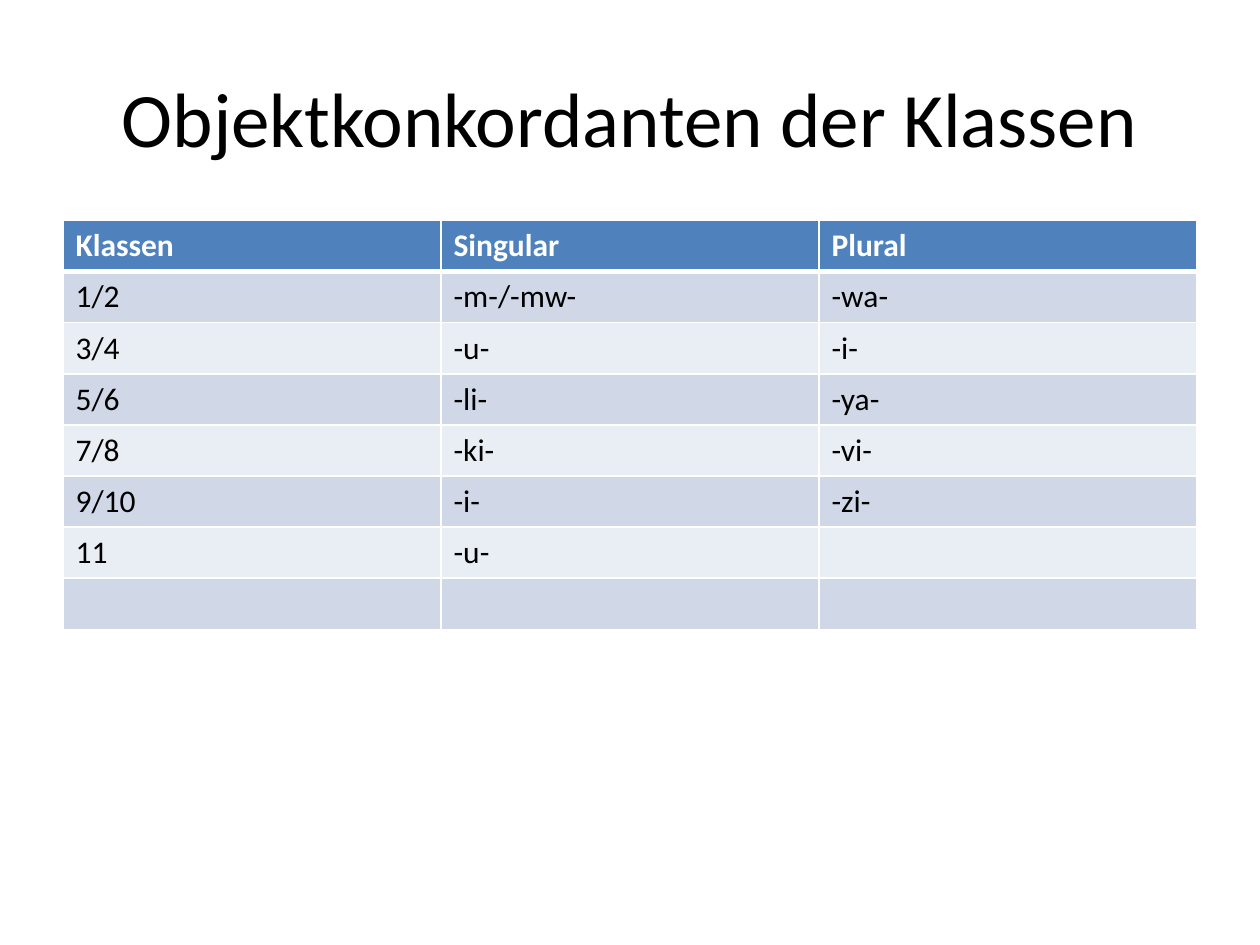
from lxml import etree
from pptx import Presentation
from pptx import util as u
from pptx.dml.color import RGBColor
from pptx.enum import text
from pptx.oxml.ns import qn

HEADER, BANDS = "4F81BD", ("D0D8E8", "E9EDF4")
WHITE, BLACK = "FFFFFF", "000000"
ROWS = [
    ("Klassen", "Singular", "Plural"),
    ("1/2", "-m-/-mw-", "-wa-"),
    ("3/4", "-u-", "-i-"),
    ("5/6", "-li-", "-ya-"),
    ("7/8", "-ki-", "-vi-"),
    ("9/10", "-i-", "-zi-"),
    ("11", "-u-", ""),
    ("", "", ""),
]


def rgb(value):
    """Turn a hex string into a colour."""
    return RGBColor.from_string(value)


def style(font, color, **values):
    """Set the font attributes given by name."""
    font.color.rgb = rgb(color)
    for name, value in {"name": "Calibri", **values}.items():
        setattr(font, name, value)


def borders(cell, widths, color=WHITE):
    """Draw the cell's edges, with widths in points by side."""
    tc_pr = cell._tc.get_or_add_tcPr()
    for i, (side, width) in enumerate(widths.items()):
        ln = etree.Element(qn(f"a:ln{side}"), w=str(u.Pt(width)))
        fill = etree.SubElement(ln, qn("a:solidFill"))
        etree.SubElement(fill, qn("a:srgbClr"), val=color)
        tc_pr.insert(i, ln)


def add_title(s, wording, box):
    """Place the centred title in the given box."""
    sp = s.shapes.title
    sp.left, sp.top, sp.width, sp.height = box
    tf = sp.text_frame
    tf.vertical_anchor = text.MSO_ANCHOR.MIDDLE
    p = tf.paragraphs[0]
    p.alignment = text.PP_ALIGN.CENTER
    r = p.add_run()
    r.text = wording
    style(r.font, BLACK, size=u.Pt(44))


def add_class_table(s, rows, box):
    """Fill the given box with a banded table of equal rows and columns."""
    table = s.shapes.add_table(len(rows), len(rows[0]), *box).table
    for i, row in enumerate(rows):
        head = i == 0
        fill = HEADER if head else BANDS[(i - 1) % 2]
        widths = {"L": 1, "R": 1, "T": 3 if i == 1 else 1, "B": 3 if head else 1}
        for j, wording in enumerate(row):
            cell = table.cell(i, j)
            cell.fill.solid()
            cell.fill.fore_color.rgb = rgb(fill)
            borders(cell, widths)
            p = cell.text_frame.paragraphs[0]
            p.text = wording
            for r in p.runs:
                style(r.font, WHITE if head else BLACK, size=u.Pt(18), bold=head)


def main():
    """Build the slide and save it."""
    prs = Presentation()
    prs.slide_width, prs.slide_height = u.Inches(10), u.Inches(7.5)
    s = prs.slides.add_slide(prs.slide_layouts[5])
    margin = int(prs.slide_width * 0.05)
    width = prs.slide_width - 2 * margin
    add_title(s, "Objektkonkordanten der Klassen",
              (margin, int(prs.slide_height * 0.04), width, u.Inches(1.25)))
    add_class_table(s, ROWS, (margin, u.Inches(1.75), width, u.Inches(3.24)))
    prs.save("out.pptx")


if __name__ == "__main__":
    main()
